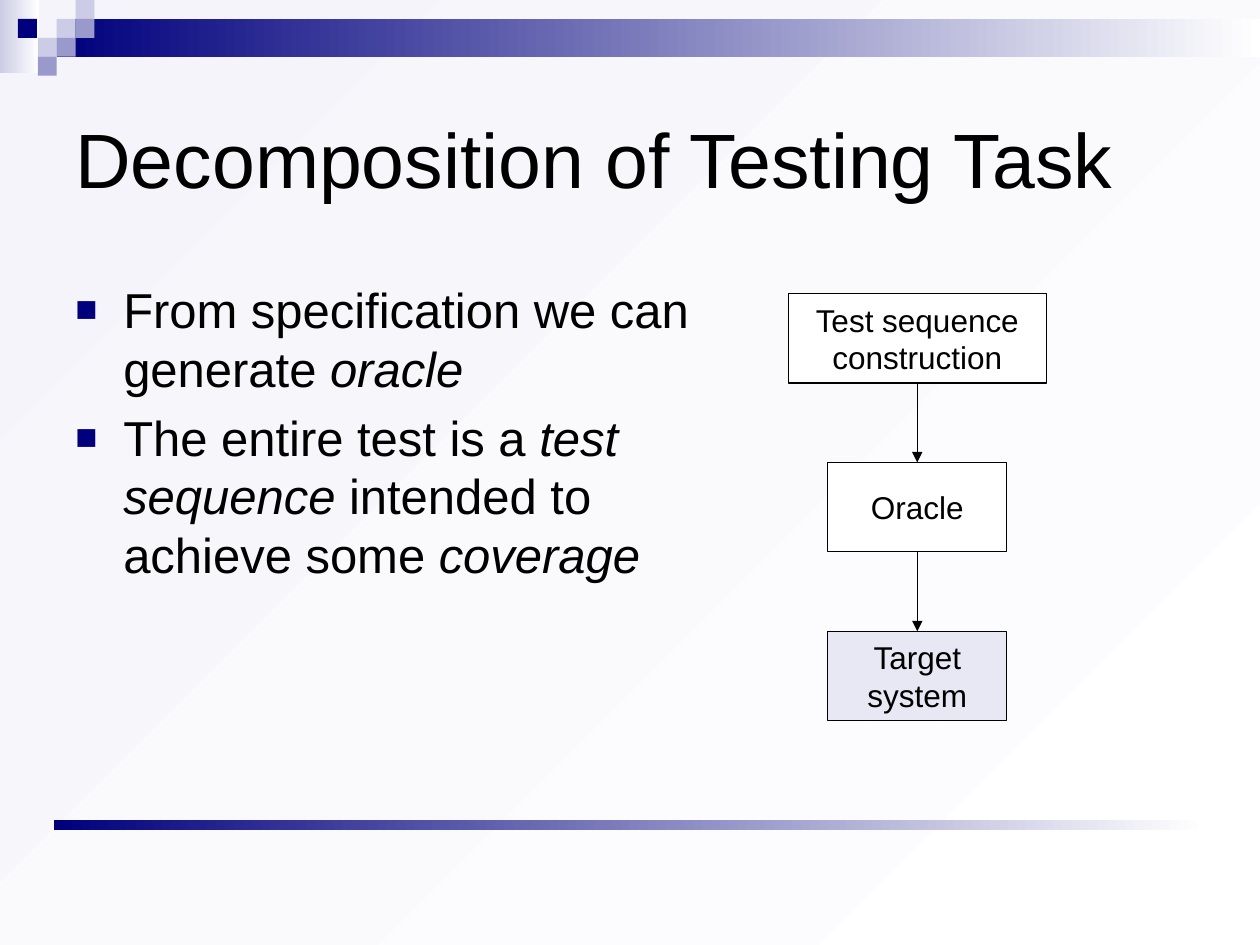
from dataclasses import dataclass

from lxml import etree
from pptx import Presentation
from pptx.dml.color import RGBColor
from pptx.enum.shapes import MSO_CONNECTOR, MSO_SHAPE
from pptx.enum.text import MSO_ANCHOR, PP_ALIGN
from pptx.oxml.ns import qn
from pptx.util import Inches, Pt

RECTANGLE = MSO_SHAPE.RECTANGLE
STRAIGHT = MSO_CONNECTOR.STRAIGHT
TOP, MIDDLE = MSO_ANCHOR.TOP, MSO_ANCHOR.MIDDLE
LEFT, CENTER = PP_ALIGN.LEFT, PP_ALIGN.CENTER
TOP_SIDE, BOTTOM_SIDE = 0, 2


@dataclass(frozen=True)
class Theme:
    font: str = "Arial"
    ink: str = "000000"
    paper: str = "FFFFFF"
    backdrop: str = "F4F4FA"
    navy: str = "00007D"
    violet: str = "9999CC"
    lavender: str = "CCCCE6"
    target: str = "E8E8F4"
    title_size: float = 44
    body_size: float = 28
    label_size: float = 18
    line_width: float = 0.75


def rgb(value):
    return RGBColor.from_string(value)


def set_gradient(fill, start, end, angle=0):
    fill.gradient()
    fill.gradient_angle = angle
    for stop, color in zip(fill.gradient_stops, (start, end)):
        stop.color.rgb = rgb(color)


def write(paragraph, text, *, font, size, color, align=LEFT):
    """Fill a paragraph; parts between asterisks become italic."""
    paragraph.alignment = align
    for index, part in enumerate(text.split("*")):
        if part:
            run = paragraph.add_run()
            run.text = part
            run.font.name = font
            run.font.size = Pt(size)
            run.font.color.rgb = rgb(color)
            run.font.italic = index % 2 == 1


def add_bullet(paragraph, color, indent):
    properties = paragraph._p.get_or_add_pPr()
    properties.set("marL", str(indent))
    properties.set("indent", str(-indent))
    bullet_color = etree.SubElement(properties, qn("a:buClr"))
    etree.SubElement(bullet_color, qn("a:srgbClr"), val=color)
    etree.SubElement(properties, qn("a:buSzPct"), val="75000")
    etree.SubElement(properties, qn("a:buFont"), typeface="Arial")
    etree.SubElement(properties, qn("a:buChar"), char="■")


class SlideBuilder:
    def __init__(self, slide, theme):
        self.slide = slide
        self.theme = theme

    def background(self):
        # 315 counterclockwise runs from top left to bottom right
        set_gradient(self.slide.background.fill, self.theme.backdrop,
                     self.theme.paper, angle=315)

    def block(self, left, top, width, height, color, fade=False):
        block = self.slide.shapes.add_shape(
            RECTANGLE, Inches(left), Inches(top), Inches(width), Inches(height))
        block.shadow.inherit = False
        block.line.fill.background()
        if fade:
            set_gradient(block.fill, color, self.theme.paper)
        else:
            block.fill.solid()
            block.fill.fore_color.rgb = rgb(color)
        return block

    def text(self, left, top, width, height, paragraphs, size,
             anchor=TOP, bulleted=False):
        box = self.slide.shapes.add_textbox(
            Inches(left), Inches(top), Inches(width), Inches(height))
        frame = box.text_frame
        frame.word_wrap = True
        frame.vertical_anchor = anchor
        for index, text in enumerate(paragraphs):
            paragraph = frame.add_paragraph() if index else frame.paragraphs[0]
            write(paragraph, text, font=self.theme.font, size=size,
                  color=self.theme.ink)
            if bulleted:
                paragraph.space_before = Pt(0.2 * size)
                add_bullet(paragraph, self.theme.navy, Inches(0.38))

    def stage(self, center, top, width, height, label, color):
        stage = self.block(center - width / 2, top, width, height, color)
        stage.line.color.rgb = rgb(self.theme.ink)
        stage.line.width = Pt(self.theme.line_width)
        frame = stage.text_frame
        frame.word_wrap = True
        frame.vertical_anchor = MIDDLE
        write(frame.paragraphs[0], label, font=self.theme.font,
              size=self.theme.label_size, color=self.theme.ink, align=CENTER)
        return stage

    def arrow(self, source, destination):
        arrow = self.slide.shapes.add_connector(STRAIGHT, 0, 0, 0, 0)
        arrow.begin_connect(source, BOTTOM_SIDE)
        arrow.end_connect(destination, TOP_SIDE)
        arrow.line.color.rgb = rgb(self.theme.ink)
        arrow.line.width = Pt(self.theme.line_width)
        etree.SubElement(arrow.line._get_or_add_ln(), qn("a:tailEnd"),
                         type="triangle")
        etree.SubElement(arrow._element.spPr, qn("a:effectLst"))


def main():
    presentation = Presentation()
    presentation.slide_width = Inches(10)
    presentation.slide_height = Inches(7.5)
    theme = Theme()
    builder = SlideBuilder(
        presentation.slides.add_slide(presentation.slide_layouts[6]), theme)
    builder.background()

    builder.block(0, 0, 0.31, 0.58, theme.lavender, fade=True)
    builder.block(0.45, 0.15, 9.55, 0.3, theme.navy, fade=True)
    tile = 0.15
    mosaic = [
        (3, 1, theme.lavender), (4, 0, theme.lavender), (4, 1, theme.violet),
        (2, 2, theme.lavender), (0.95, 1, theme.navy), (3, 2, theme.violet),
        (2, 3, theme.violet),
    ]
    for column, row, color in mosaic:
        builder.block(column * tile, row * tile, tile, tile, color)
    builder.block(0.43, 6.51, 9.14, 0.08, theme.navy, fade=True)

    builder.text(0.5, 0.5, 9, 1.5, ["Decomposition of Testing Task"],
                 theme.title_size, anchor=MIDDLE)
    builder.text(0.5, 2.17, 5.29, 4.25, [
        "From specification we can generate *oracle*",
        "The entire test is a *test sequence* intended to achieve some *coverage*",
    ], theme.body_size, bulleted=True)

    flow_center, flow_top, flow_step, stage_height = 7.28, 2.33, 1.34, 0.71
    flow = [
        ("Test sequence construction", 2.05, theme.paper),
        ("Oracle", 1.42, theme.paper),
        ("Target system", 1.42, theme.target),
    ]
    stages = [
        builder.stage(flow_center, flow_top + index * flow_step, width,
                      stage_height, label, color)
        for index, (label, width, color) in enumerate(flow)
    ]
    for source, destination in zip(stages, stages[1:]):
        builder.arrow(source, destination)

    presentation.save("out.pptx")


if __name__ == "__main__":
    main()
